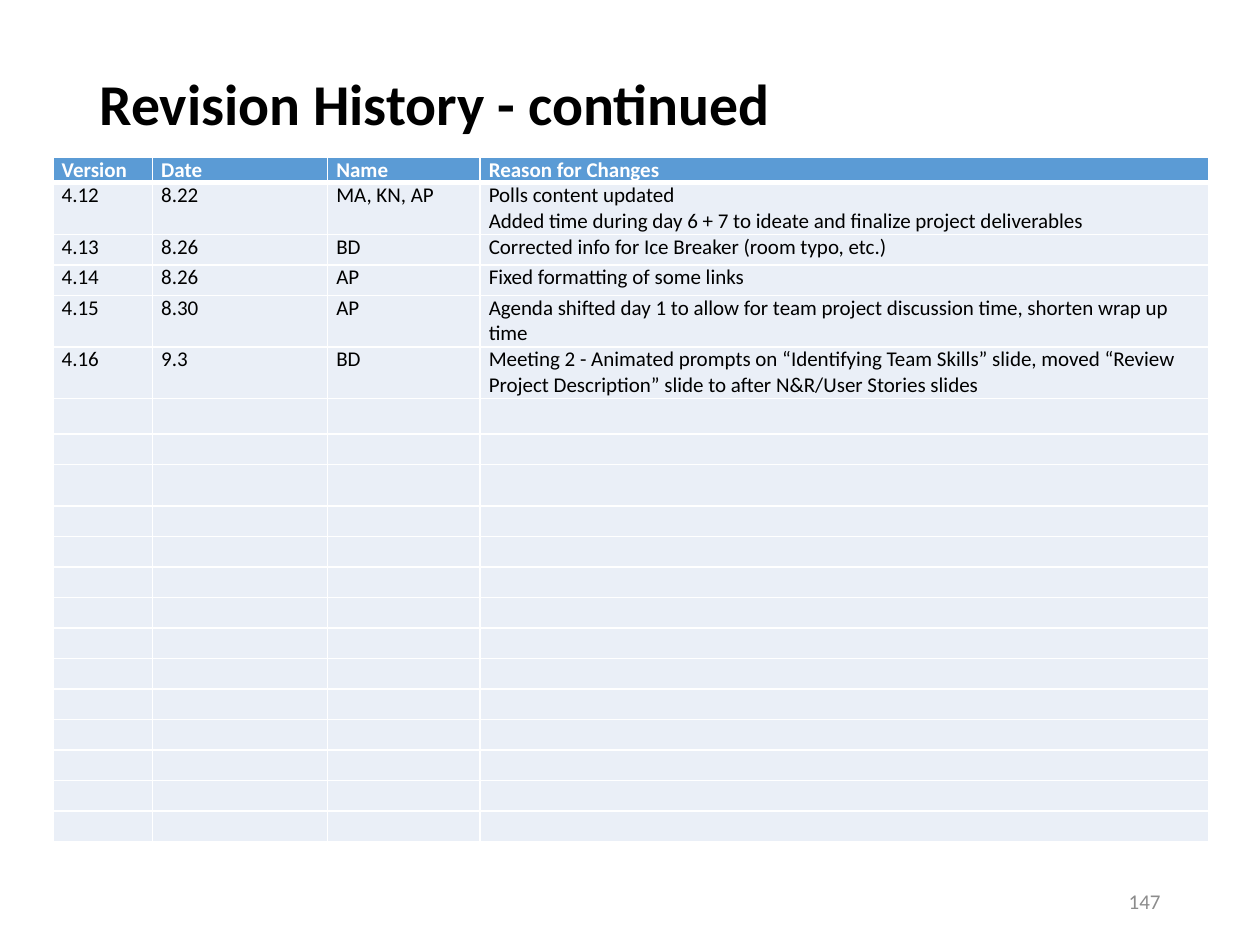
from lxml import etree
from pptx import Presentation
from pptx.dml.color import RGBColor
from pptx.enum import text
from pptx.oxml.ns import qn
from pptx.util import Inches, Pt

COLORS = {"black": "000000", "white": "FFFFFF", "header": "5B9BD5",
          "body": "EAEFF7", "number": "8C8C8C"}
TITLE = "Revision History - continued\v"
PAGE_NUMBER = "147"
HEADER = ("Version", "Date", "Name", "Reason for Changes")
REVISIONS = [
    ("4.12", "8.22", "MA, KN, AP", "Polls content updated\n"
     "Added time during day 6 + 7 to ideate and finalize project deliverables"),
    ("4.13", "8.26", "BD", "Corrected info for Ice Breaker (room typo, etc.)"),
    ("4.14", "8.26", "AP", "Fixed formatting of some links"),
    ("4.15", "8.30", "AP", "Agenda shifted day 1 to allow for team project "
     "discussion time, shorten wrap up time"),
    ("4.16", "9.3", "BD", "Meeting 2 - Animated prompts on “Identifying Team Skills” slide, "
     "moved “Review Project Description” slide to after N&R/User Stories slides"),
]
ROW_COUNT = 20
COL_WIDTHS = (0.79, 1.39, 1.21, 5.78)
TABLE_HEIGHT = 5.43
SPECIAL_HEIGHTS = {0: 0.2, 1: 0.41, 4: 0.41, 5: 0.41, 6: 0.28, 8: 0.33}


def write(tf, content, size=12, color="black", bold=False,
          align=text.PP_ALIGN.LEFT, spacing=None):
    tf.word_wrap = True
    tf.text = content
    for p in tf.paragraphs:
        p.alignment = align
        if spacing:
            p.line_spacing = spacing
        for r in p.runs:
            r.font.name = "Calibri"
            r.font.size = Pt(size)
            r.font.bold = bold
            r.font.color.rgb = RGBColor.from_string(COLORS[color])
        etree.SubElement(p._p, qn("a:endParaRPr"), sz=str(size * 100))


def add_text(s, content, box, **fmt):
    tf = s.shapes.add_textbox(*map(Inches, box)).text_frame
    tf.vertical_anchor = text.MSO_ANCHOR.MIDDLE
    write(tf, content, **fmt)


def set_borders(cell, widths):
    tcPr = cell._tc.get_or_add_tcPr()
    for i, (side, width) in enumerate(widths.items()):
        ln = etree.Element(qn("a:ln" + side), w=str(Pt(width)))
        fill = etree.SubElement(ln, qn("a:solidFill"))
        etree.SubElement(fill, qn("a:srgbClr"), val=COLORS["white"])
        tcPr.insert(i, ln)


def add_revision_table(s):
    rows = [HEADER] + REVISIONS
    rows += [("",) * len(HEADER)] * (ROW_COUNT - len(rows))
    plain_height = ((TABLE_HEIGHT - sum(SPECIAL_HEIGHTS.values()))
                    / (ROW_COUNT - len(SPECIAL_HEIGHTS)))
    table = s.shapes.add_table(ROW_COUNT, len(HEADER), Inches(0.42), Inches(1.25),
                               Inches(sum(COL_WIDTHS)), Inches(TABLE_HEIGHT)).table
    for column, width in zip(table.columns, COL_WIDTHS):
        column.width = Inches(width)
    for i, values in enumerate(rows):
        table.rows[i].height = Inches(SPECIAL_HEIGHTS.get(i, plain_height))
        head = i == 0
        for j, value in enumerate(values):
            cell = table.cell(i, j)
            cell.margin_left = cell.margin_right = Inches(0.07)
            cell.margin_top = cell.margin_bottom = 0
            cell.fill.solid()
            cell.fill.fore_color.rgb = RGBColor.from_string(COLORS["header" if head else "body"])
            set_borders(cell, {"L": 1, "R": 1, "T": 3 if i == 1 else 1, "B": 3 if head else 1})
            write(cell.text_frame, value, color="white" if head else "black", bold=head)


def main():
    prs = Presentation()
    prs.slide_width, prs.slide_height = Inches(10), Inches(7.5)
    s = prs.slides.add_slide(prs.slide_layouts[6])
    add_text(s, TITLE, (0.69, 0.4, 8.62, 1.45), size=33, bold=True, spacing=0.9)
    add_revision_table(s)
    add_text(s, PAGE_NUMBER, (7.06, 6.95, 2.25, 0.4), color="number",
             align=text.PP_ALIGN.RIGHT)
    prs.save("out.pptx")


if __name__ == "__main__":
    main()
